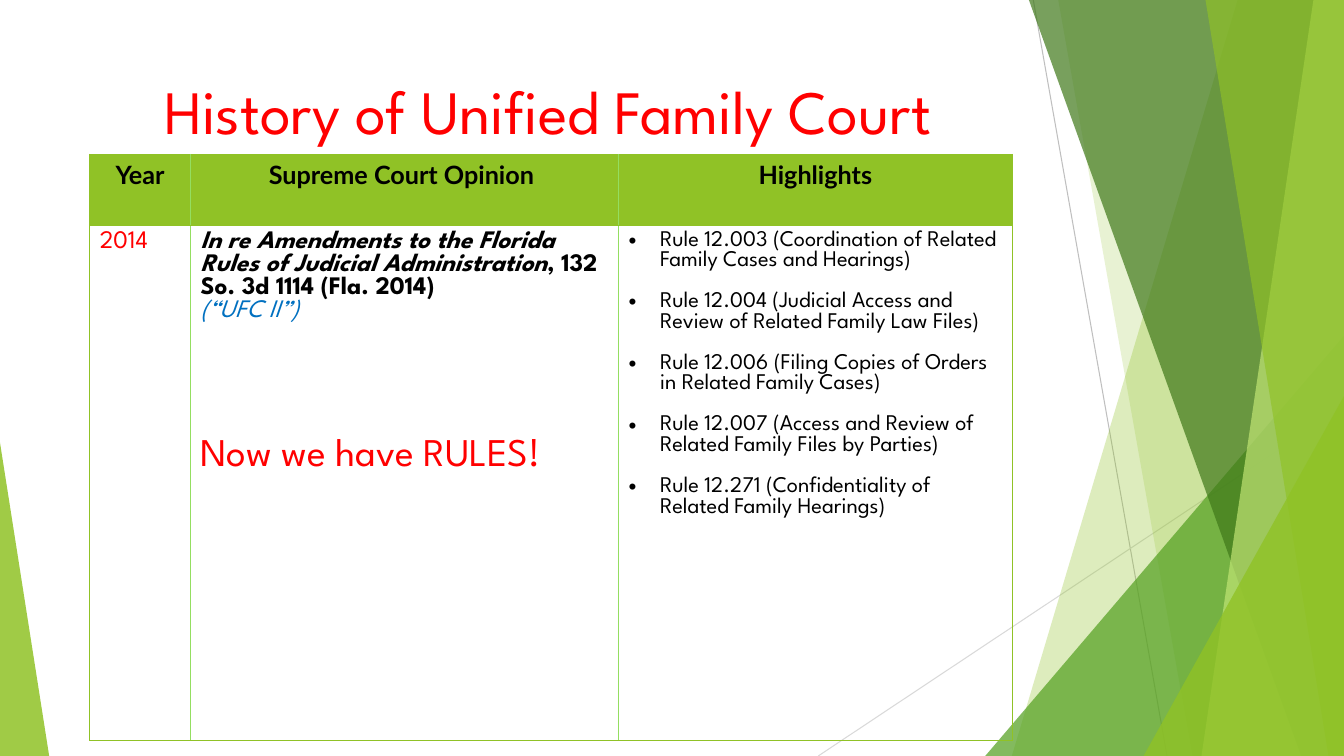
from collections import namedtuple
from dataclasses import dataclass

from lxml import etree
from pptx import Presentation
from pptx import util as u
from pptx.dml.color import RGBColor
from pptx.enum import shapes, text
from pptx.oxml.ns import qn

Box = namedtuple("Box", "left top width height")
Cm = u.Cm


@dataclass(frozen=True)
class Theme:
    lime: str = "90C226"
    green: str = "54A021"
    forest: str = "3F7819"
    pale: str = "C0E474"
    grid: str = "94DE61"
    red: str = "FF0000"
    blue: str = "0070C0"
    black: str = "000000"
    line_dark: str = "BFBFBF"
    line_light: str = "D9D9D9"
    head_font: str = "Lato"
    body_font: str = "League Spartan"
    title_size: int = 44
    callout_size: int = 28
    text_size: int = 18
    rule_size: int = 16


THEME = Theme()
HEADINGS = ["Year", "Supreme Court Opinion ", "Highlights"]
RULES = [
    "Rule 12.003 (Coordination of Related Family Cases and Hearings)",
    "Rule 12.004 (Judicial Access and Review of Related Family Law Files)",
    "Rule 12.006 (Filing Copies of Orders in Related Family Cases)",
    "Rule 12.007 (Access and Review of Related Family Files by Parties)",
    "Rule 12.271 (Confidentiality of Related Family Hearings)",
]


def set_all(target, values):
    for name, value in values.items():
        setattr(target, name, value)


def add_span(para, words, color, size=THEME.text_size, name=THEME.body_font,
             bold=False, italic=False):
    span = para.add_run()
    span.text = words
    set_all(span.font, {"size": u.Pt(size), "name": name, "bold": bold, "italic": italic})
    span.font.color.rgb = RGBColor.from_string(color)


def paint(shape, color, opacity):
    shape.shadow.inherit = False
    shape.fill.solid()
    shape.fill.fore_color.rgb = RGBColor.from_string(color)
    shape.line.fill.background()
    tint = shape.element.xpath("./p:spPr/a:solidFill/a:srgbClr")[0]
    etree.SubElement(tint, qn("a:alpha")).set("val", str(opacity * 1000))


def draw_line(page, start, end, color):
    line = page.shapes.add_connector(
        shapes.MSO_CONNECTOR.STRAIGHT, *(Cm(value) for value in start + end))
    line.line.color.rgb = RGBColor.from_string(color)
    line.line.width = u.Pt(0.75)
    etree.SubElement(line.element.spPr, qn("a:effectLst"))


def draw_band(page, box, top_x, bottom_x):
    """Area from a slanted left edge to the right side of the box."""
    right, bottom = box.left + box.width, box.top + box.height
    outline = page.shapes.build_freeform(Cm(box.left + top_x), Cm(box.top))
    corners = [(right, box.top), (right, bottom), (box.left + bottom_x, bottom)]
    outline.add_line_segments([(Cm(x), Cm(y)) for x, y in corners])
    return outline.convert_to_shape()


def draw_corner(page, box, width, height, apex):
    """Right triangle in the lower left (apex 0) or lower right (apex 1) corner."""
    left = box.left + apex * (box.width - width)
    shape = page.shapes.add_shape(
        shapes.MSO_SHAPE.ISOSCELES_TRIANGLE, Cm(left),
        Cm(box.top + box.height - height), Cm(width), Cm(height))
    shape.adjustments[0] = apex
    return shape


def draw_facets(page, box):
    right, bottom = box.left + box.width, box.top + box.height
    draw_line(page, (box.left + 26.04, box.top), (box.left + 29.41, bottom), THEME.line_dark)
    draw_line(page, (right, box.top + 10.24), (box.left + 20.62, bottom), THEME.line_light)
    facets = [
        (draw_band, (31.19, 25.5), THEME.lime, 30),
        (draw_band, (26.67, 30.05), THEME.lime, 20),
        (draw_corner, (9.04, 10.59, 1), THEME.green, 72),
        (draw_band, (25.93, 32.79), THEME.forest, 70),
        (draw_band, (33.1, 30.28), THEME.pale, 70),
        (draw_band, (30.38, 33.48), THEME.lime, 65),
        (draw_corner, (5.05, 9.07, 1), THEME.lime, 80),
        (draw_corner, (1.24, 7.9, 0), THEME.lime, 85),
    ]
    for draw, measures, color, opacity in facets:
        paint(draw(page, box, *measures), color, opacity)


def place_title(page, box):
    title = page.shapes.title
    set_all(title, {side: Cm(value) for side, value in box._asdict().items()})
    title.element.getparent().append(title.element)  # bring in front of the facets
    frame = title.text_frame
    set_all(frame, {"word_wrap": True, "auto_size": text.MSO_AUTO_SIZE.NONE,
                    "vertical_anchor": text.MSO_ANCHOR.TOP, "margin_top": Cm(0.13)})
    para = frame.paragraphs[0]
    para.alignment = text.PP_ALIGN.CENTER
    add_span(para, "History of Unified Family Court", THEME.red, THEME.title_size)


def set_borders(cell, colors):
    for side, color in colors.items():
        line = etree.SubElement(cell._tc.get_or_add_tcPr(), qn(f"a:ln{side}"), w="12700")
        fill = etree.SubElement(line, qn("a:solidFill"))
        etree.SubElement(fill, qn("a:srgbClr"), val=color)


def add_bullet(para):
    props = para._p.get_or_add_pPr()
    indent = Cm(0.79)
    props.set("marL", str(indent))
    props.set("indent", str(-indent))
    etree.SubElement(props, qn("a:buFont"), typeface="Arial")
    etree.SubElement(props, qn("a:buChar"), char="•")


def fill_opinion(frame):
    citation = frame.paragraphs[0]
    add_span(citation, "In re Amendments to the Florida Rules of Judicial Administration",
             THEME.black, bold=True, italic=True)
    add_span(citation, ", 132 So. 3d 1114 (Fla. 2014)", THEME.black, bold=True)
    nickname = frame.add_paragraph()
    nickname.space_after = u.Pt(83)
    add_span(nickname, "(“UFC II”)", THEME.blue, italic=True)
    add_span(frame.add_paragraph(), "Now we have RULES!", THEME.red, THEME.callout_size)


def fill_highlights(frame):
    for number, rule in enumerate(RULES):
        para = frame.add_paragraph() if number else frame.paragraphs[0]
        para.space_after = u.Pt(14.7)
        add_bullet(para)
        add_span(para, rule, THEME.black, THEME.rule_size)


def place_history(page, box):
    table = page.shapes.add_table(2, 3, *(Cm(value) for value in box)).table
    set_all(table, {"first_row": False, "horz_banding": False})
    for column, width in zip(table.columns, (2.54, 10.79, box.width - 13.33)):
        column.width = Cm(width)
    for row, height in zip(table.rows, (1.79, box.height - 1.79)):
        row.height = Cm(height)
    last = len(HEADINGS) - 1
    for index, heading in enumerate(HEADINGS):
        head, body = table.cell(0, index), table.cell(1, index)
        for cell in (head, body):
            set_borders(cell, {"L": THEME.grid if index else THEME.lime,
                               "R": THEME.grid if index < last else THEME.lime,
                               "T": THEME.lime, "B": THEME.lime})
        head.fill.solid()
        head.fill.fore_color.rgb = RGBColor.from_string(THEME.lime)
        body.fill.background()
        para = head.text_frame.paragraphs[0]
        para.alignment = text.PP_ALIGN.CENTER
        add_span(para, heading, THEME.black, name=THEME.head_font, bold=True)
    add_span(table.cell(1, 0).text_frame.paragraphs[0], "2014", THEME.red)
    fill_opinion(table.cell(1, 1).text_frame)
    fill_highlights(table.cell(1, 2).text_frame)


def main():
    deck = Presentation()
    set_all(deck, {"slide_width": Cm(33.87), "slide_height": Cm(19.05)})
    page = deck.slides.add_slide(deck.slide_layouts.get_by_name("Title Only"))
    draw_facets(page, Box(0, 0, 33.87, 19.05))
    place_title(page, Box(1.88, 1.7, 23.88, 3.66))
    place_history(page, Box(2.26, 3.89, 23.25, 14.76))
    deck.save("out.pptx")


if __name__ == "__main__":
    main()
